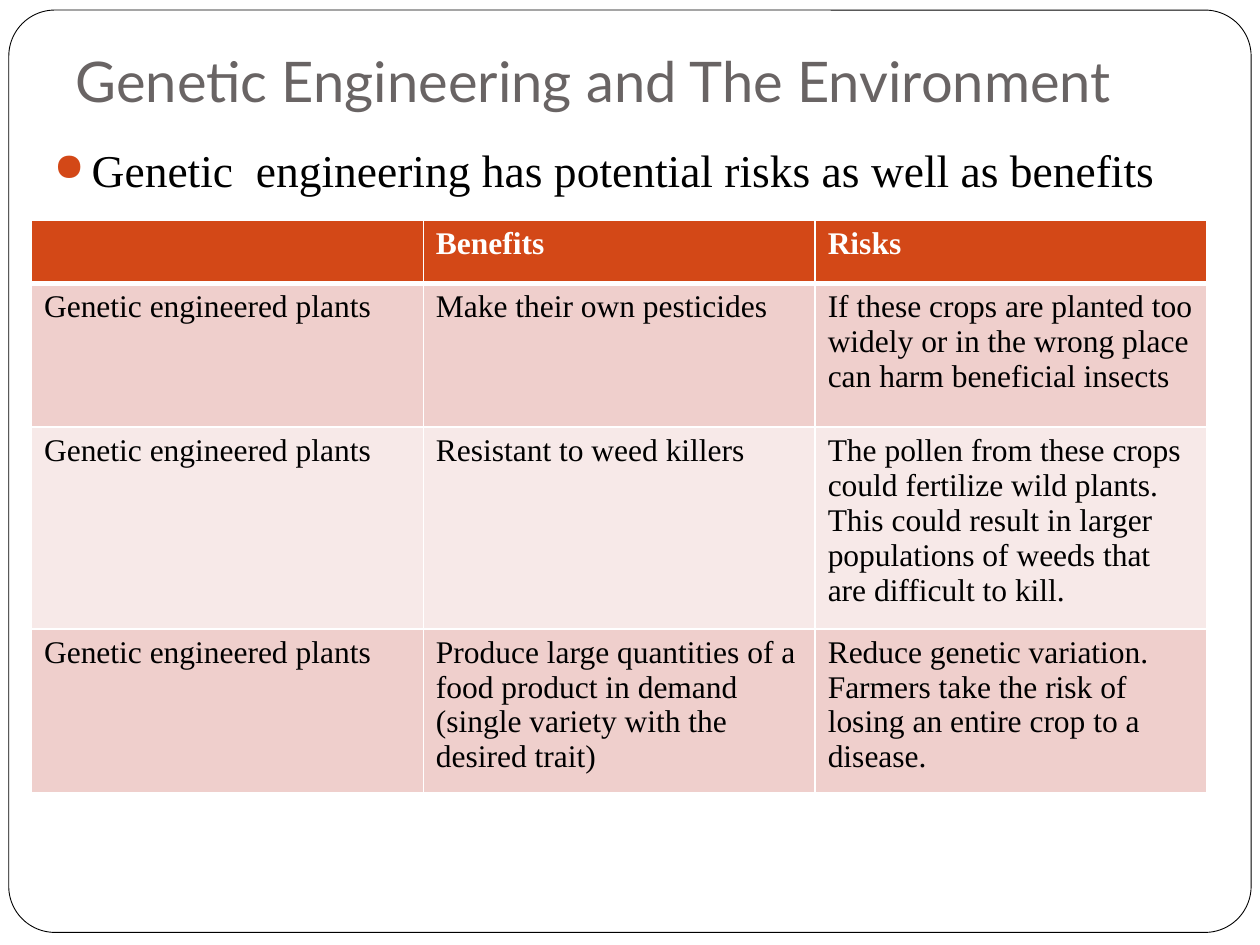
"""Build a slide on the benefits and risks of genetic engineering."""
from lxml.etree import SubElement
from pptx import Presentation
from pptx.dml.color import RGBColor
from pptx.enum.shapes import MSO_SHAPE as Shape
from pptx.enum.text import MSO_ANCHOR as Anchor, MSO_AUTO_SIZE as AutoSize, PP_ALIGN as Align
from pptx.oxml.ns import qn
from pptx.util import Inches, Pt

WHITE = RGBColor(0xFF, 0xFF, 0xFF)
BLACK = RGBColor(0x00, 0x00, 0x00)
GRAY = RGBColor(0x69, 0x64, 0x64)
ORANGE = RGBColor(0xD3, 0x48, 0x17)
ROSE = RGBColor(0xEF, 0xCF, 0xCC)
PALE_ROSE = RGBColor(0xF7, 0xE9, 0xE8)

HEADING_FONT = "Lato"
BODY_FONT = "Times New Roman"
WIDTH, HEIGHT = Inches(10), Inches(7.5)
HEADER_HEIGHT, ROW_HEIGHT = Inches(0.5), Inches(1.14)

PLANTS = "Genetic engineered plants"
COMPARISON = [
    ("", "Benefits", "Risks"),
    (PLANTS, "Make their own pesticides",
     "If these crops are planted too widely or in the wrong place can harm beneficial insects"),
    (PLANTS, "Resistant to weed killers",
     "The pollen from these crops could fertilize wild plants. "
     "This could result in larger populations of weeds that are difficult to kill."),
    (PLANTS,
     "Produce large quantities of a food product in demand (single variety with the desired trait)",
     "Reduce genetic variation. Farmers take the risk of losing an entire crop to a disease."),
]


def add_run(paragraph, text, font, size, color, bold=False):
    """Append one formatted run to a paragraph."""
    run = paragraph.add_run()
    run.text = text
    run.font.name, run.font.size, run.font.bold = font, Pt(size), bold
    run.font.color.rgb = color


def set_title(slide, text):
    """Place and format the title placeholder."""
    title = slide.shapes.title
    title.left, title.top = int(WIDTH * 0.05), int(HEIGHT * 0.04)
    title.width, title.height = int(WIDTH * 0.9), Inches(0.7)
    frame = title.text_frame
    frame.auto_size, frame.vertical_anchor = AutoSize.NONE, Anchor.BOTTOM
    frame.margin_bottom = Inches(0.1)
    paragraph = frame.paragraphs[0]
    paragraph.alignment = Align.LEFT
    add_run(paragraph, text, HEADING_FONT, 32, GRAY)


def add_border(slide):
    """Outline the slide with a rounded frame behind the title."""
    border = slide.shapes.add_shape(
        Shape.ROUNDED_RECTANGLE, Inches(0.07), Inches(0.08), Inches(9.86), Inches(7.32))
    border.adjustments[0] = 0.05
    border.shadow.inherit = False
    border.fill.solid()
    border.fill.fore_color.rgb = WHITE
    border.line.color.rgb = BLACK
    border.line.width = Pt(0.5)
    slide.shapes.title.element.addprevious(border.element)


def add_bullet(slide, text):
    """Add the key statement as a bulleted paragraph."""
    statement = slide.shapes.add_textbox(Inches(0.33), Inches(1.08), Inches(9.17), Inches(5.5))
    statement.text_frame.word_wrap = True
    paragraph = statement.text_frame.paragraphs[0]
    paragraph.space_before = Pt(5.8)
    properties = paragraph._p.get_or_add_pPr()
    properties.set("marL", str(Inches(0.3)))
    properties.set("indent", str(-Inches(0.3)))
    bullet_color = SubElement(properties, qn("a:buClr"))
    SubElement(bullet_color, qn("a:srgbClr"), val=str(ORANGE))
    SubElement(properties, qn("a:buSzPct"), val="85000")
    SubElement(properties, qn("a:buChar"), char="●")
    add_run(paragraph, text, BODY_FONT, 26, BLACK)


def set_cell_borders(cell, top, bottom):
    """Draw white cell edges with the given top and bottom widths in points."""
    properties = cell._tc.get_or_add_tcPr()
    for edge, width in (("L", 1), ("R", 1), ("T", top), ("B", bottom)):
        line = SubElement(properties, qn(f"a:ln{edge}"), w=str(Pt(width)))
        fill = SubElement(line, qn("a:solidFill"))
        SubElement(fill, qn("a:srgbClr"), val=str(WHITE))


def add_comparison(slide, rows):
    """Add the banded table of benefits and risks."""
    table = slide.shapes.add_table(
        len(rows), len(rows[0]), Inches(0.25), Inches(1.75), Inches(9.33),
        HEADER_HEIGHT + ROW_HEIGHT * (len(rows) - 1)).table
    for r, texts in enumerate(rows):
        is_header = r == 0
        table.rows[r].height = HEADER_HEIGHT if is_header else ROW_HEIGHT
        band = ORANGE if is_header else (ROSE if r % 2 else PALE_ROSE)
        for c, text in enumerate(texts):
            cell = table.cell(r, c)
            set_cell_borders(cell, 3 if r == 1 else 1, 3 if is_header else 1)
            cell.fill.solid()
            cell.fill.fore_color.rgb = band
            if text:
                add_run(cell.text_frame.paragraphs[0], text, BODY_FONT, 18,
                        WHITE if is_header else BLACK, is_header)


def main():
    """Assemble and save the slide."""
    deck = Presentation()
    deck.slide_width, deck.slide_height = WIDTH, HEIGHT
    slide = deck.slides.add_slide(deck.slide_layouts[5])
    set_title(slide, "Genetic Engineering and The Environment")
    add_border(slide)
    add_bullet(slide, "Genetic  engineering has potential risks as well as benefits")
    add_comparison(slide, COMPARISON)
    deck.save("out.pptx")


if __name__ == "__main__":
    main()
